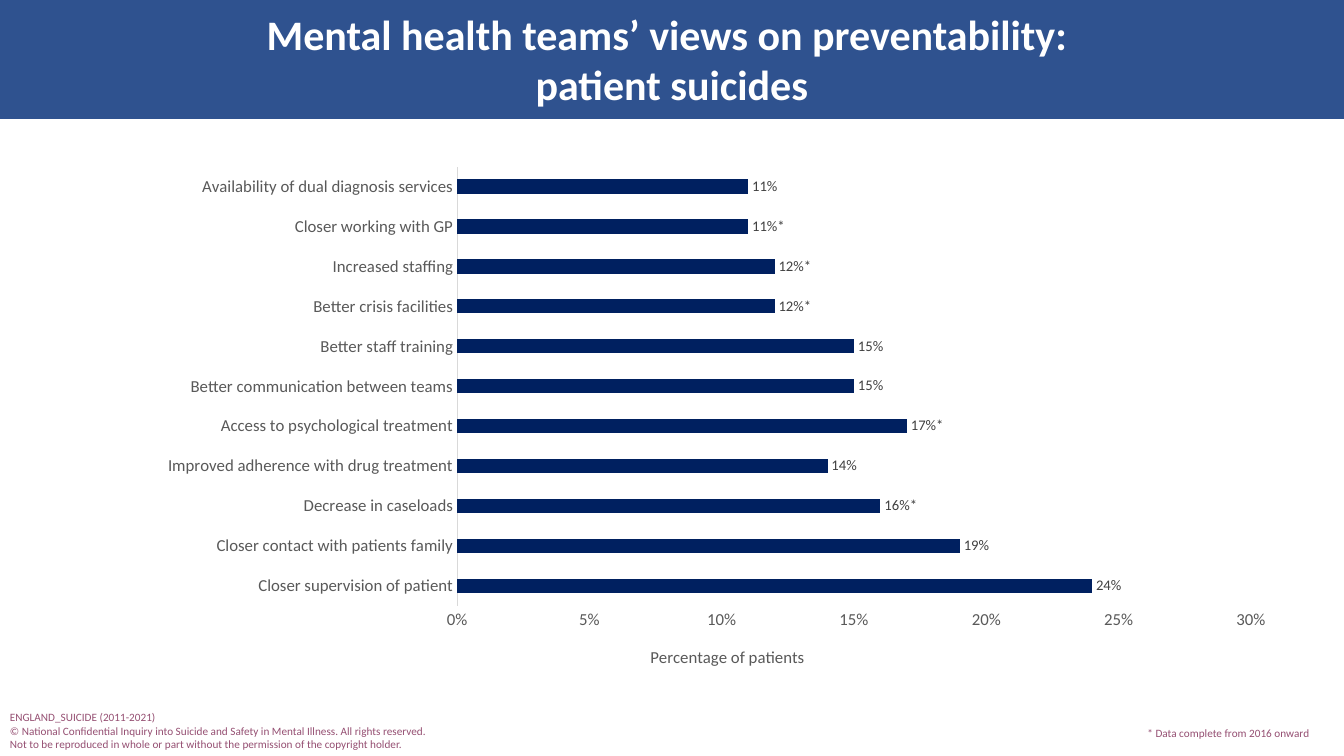
from pptx import Presentation
from pptx.chart.data import CategoryChartData as ChartData
from pptx.dml.color import RGBColor
from pptx.enum.chart import XL_CHART_TYPE as Kind, XL_LABEL_POSITION as Spot, XL_TICK_MARK as Tick
from pptx.enum.shapes import MSO_SHAPE as Shape
from pptx.enum.text import MSO_ANCHOR as Anchor, MSO_AUTO_SIZE as Fit, PP_ALIGN as Align
from pptx.oxml import parse_xml
from pptx.oxml.ns import nsdecls
from pptx.util import Pt

# Content
TITLE = ["Mental health teams’ views on preventability: ", "patient suicides"]
SOURCE = [
    "ENGLAND_SUICIDE (2011-2021)",
    "© National Confidential Inquiry into Suicide and Safety in Mental Illness. All rights reserved.",
    "Not to be reproduced in whole or part without the permission of the copyright holder.",
]
NOTE = ["* Data complete from 2016 onward"]
AXIS = "Percentage of patients"
VIEWS = [  # factor, share of patients, mark after the label
    ("Closer supervision of patient", 0.24, ""),
    ("Closer contact with patients family", 0.19, ""),
    ("Decrease in caseloads", 0.16, "*"),
    ("Improved adherence with drug treatment", 0.14, ""),
    ("Access to psychological treatment", 0.17, "*"),
    ("Better communication between teams", 0.15, ""),
    ("Better staff training", 0.15, ""),
    ("Better crisis facilities", 0.12, "*"),
    ("Increased staffing", 0.12, "*"),
    ("Closer working with GP", 0.11, "*"),
    ("Availability of dual diagnosis services", 0.11, ""),
]

# Look
BLUE = RGBColor(0x2F, 0x52, 0x8F)
NAVY = RGBColor(0x00, 0x20, 0x60)
PLUM = RGBColor(0x95, 0x4F, 0x72)
GREY = RGBColor(0x59, 0x59, 0x59)
DARK = RGBColor(0x40, 0x40, 0x40)
PALE = RGBColor(0xD9, 0xD9, 0xD9)
WHITE = RGBColor(0xFF, 0xFF, 0xFF)
WIDE, HIGH = 960, 540

HEAD = {"size": Pt(30), "bold": True, "color": WHITE}
FOOT = {"size": Pt(8), "bold": False, "color": PLUM}
TICKS = {"size": Pt(12), "bold": False, "color": GREY}
LABEL = {"size": Pt(10.5), "bold": False, "color": DARK}


def style(font, look):
    for key, val in {"name": "Calibri", **look}.items():
        if key == "color":
            font.color.rgb = val
        else:
            setattr(font, key, val)


def write(frame, lines, look, align=Align.LEFT):
    for i, line in enumerate(lines):
        para = frame.add_paragraph() if i else frame.paragraphs[0]
        para.alignment = align
        run = para.add_run()
        run.text = line
        style(run.font, look)


def layout(x, y, size=None):
    """Manual chart layout, in fractions of the chart frame."""
    parts = [("xMode", "edge"), ("yMode", "edge"), ("x", x), ("y", y)]
    if size:
        parts = [("layoutTarget", "inner")] + parts + list(zip("wh", size))
    body = "".join(f'<c:{tag} val="{val}"/>' for tag, val in parts)
    return parse_xml(f'<c:layout {nsdecls("c")}><c:manualLayout>{body}</c:manualLayout></c:layout>')


def place(node, lay, index):
    for old in node.findall(lay.tag):
        node.remove(old)
    node.insert(index, lay)


def main():
    prs = Presentation()
    prs.slide_width, prs.slide_height = Pt(WIDE), Pt(HIGH)
    slide = prs.slides.add_slide(prs.slide_layouts[5])
    shapes = slide.shapes

    # Band, sent behind the title
    band = shapes.add_shape(Shape.RECTANGLE, 0, 0, Pt(WIDE), Pt(85))
    band.shadow.inherit = False
    band.fill.solid()
    band.fill.fore_color.rgb = BLUE
    band.line.fill.background()
    shapes._spTree.insert(2, band._element)

    # Title
    title = shapes.title
    title.left, title.top, title.width, title.height = 0, Pt(9), Pt(WIDE), Pt(66)
    title.text_frame.auto_size = Fit.NONE
    title.text_frame.vertical_anchor = Anchor.MIDDLE
    write(title.text_frame, TITLE, HEAD, Align.CENTER)

    # Footers
    for box, lines, wrap in [((0, 504, 315, 36.5), SOURCE, False),
                             ((812.5, 515, 147.5, 17), NOTE, True)]:
        frame = shapes.add_textbox(*map(Pt, box)).text_frame
        frame.word_wrap = wrap
        frame.auto_size = Fit.SHAPE_TO_FIT_TEXT
        write(frame, lines, FOOT)

    # Chart
    data = ChartData(number_format="0%")
    data.categories = [name for name, _, _ in VIEWS]
    data.add_series("Series 1", [share for _, share, _ in VIEWS])
    spot = map(Pt, (119, 111.5, 798.5, 378))
    chart = shapes.add_chart(Kind.BAR_CLUSTERED, *spot, data).chart
    chart.has_legend = chart.has_title = False
    style(chart.font, {"size": Pt(10)})
    area = chart._chartSpace.chart.plotArea
    place(area, layout(0.26, 0.02, (0.71, 0.83)), 0)

    # Bars and their labels
    plot = chart.plots[0]
    plot.gap_width, plot.vary_by_categories = 182, False
    bars = plot.series[0]
    bars.format.fill.solid()
    bars.format.fill.fore_color.rgb = NAVY
    tags = bars.data_labels
    tags.show_value, tags.position = True, Spot.OUTSIDE_END
    tags.number_format, tags.number_format_is_linked = "0%", False
    style(tags.font, LABEL)
    for i, (_, share, mark) in enumerate(VIEWS):
        if mark:
            tag = bars.points[i].data_label
            write(tag.text_frame, [f"{share:.0%}{mark}"], LABEL, Align.CENTER)
            tag.position = Spot.OUTSIDE_END

    # Axes
    cats, vals = chart.category_axis, chart.value_axis
    for axis in (cats, vals):
        axis.major_tick_mark = axis.minor_tick_mark = Tick.NONE
        axis.has_major_gridlines = False
        style(axis.tick_labels.font, TICKS)
    cats.format.line.color.rgb = PALE
    cats.format.line.width = Pt(0.75)
    vals.format.line.fill.background()
    vals.minimum_scale, vals.maximum_scale, vals.major_unit = 0, 0.3, 0.05
    vals.tick_labels.number_format = "0%"
    vals.tick_labels.number_format_is_linked = False
    name = vals.axis_title
    write(name.text_frame, [AXIS], TICKS, Align.CENTER)
    place(name._element, layout(0.43, 0.92), 1)

    prs.save("out.pptx")


if __name__ == "__main__":
    main()
